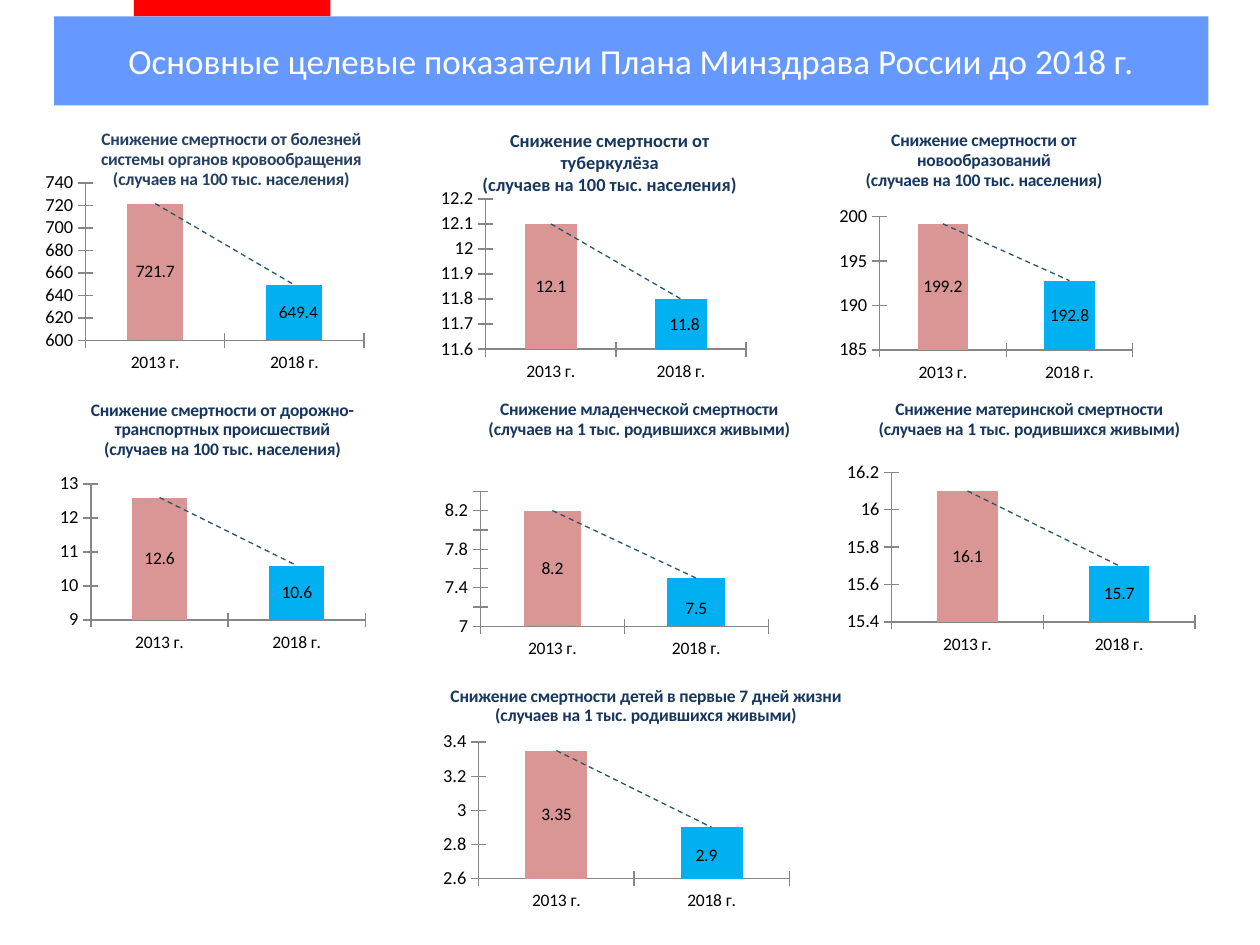
from pptx import Presentation
from pptx.chart.data import CategoryChartData
from pptx.dml.color import RGBColor
from pptx.enum.chart import XL_CHART_TYPE as ChartType
from pptx.enum.chart import XL_LABEL_POSITION as LabelPosition
from pptx.enum.chart import XL_TICK_MARK as TickMark
from pptx.enum.shapes import MSO_SHAPE as ShapeKind
from pptx.enum.text import MSO_ANCHOR as Anchor
from pptx.enum.text import PP_ALIGN as Align
from pptx.oxml import parse_xml
from pptx.util import Pt

CHART_NS = "http://schemas.openxmlformats.org/drawingml/2006/chart"
DRAWING_NS = "http://schemas.openxmlformats.org/drawingml/2006/main"
NAMESPACES = f'xmlns:c="{CHART_NS}" xmlns:a="{DRAWING_NS}"'
YEARS = ["2013 г.", "2018 г."]
PER_100_THOUSAND = "(случаев на 100 тыс. населения)"
PER_THOUSAND = "(случаев на 1 тыс. родившихся живыми)"


def color(hex_value):
    return RGBColor.from_string(hex_value)


def set_all(target, values):
    for name, value in values.items():
        setattr(target, name, value)


def layout(values, inner=False):
    parts = '<c:layoutTarget val="inner"/>' if inner else ""
    modes = ("x", "y") if len(values) == 4 or not inner else ()
    parts += "".join(f'<c:{axis}Mode val="edge"/>' for axis in modes)
    parts += "".join(f'<c:{name} val="{value}"/>' for name, value in zip("xywh", values))
    return parse_xml(f"<c:layout {NAMESPACES}><c:manualLayout>{parts}</c:manualLayout></c:layout>")


def label_offset(values):
    parts = "".join(f'<c:{name} val="{value}"/>' for name, value in zip("xy", values))
    return parse_xml(f"<c:layout {NAMESPACES}><c:manualLayout>{parts}</c:manualLayout></c:layout>")


class SlideBuilder:
    font_name = "Calibri"
    bar_colors = ("D99694", "00B0F0")
    axis_color = "868686"
    trend_color = "215968"

    def __init__(self, slide):
        self.slide = slide

    def style_font(self, font, size, hex_value="000000", bold=False):
        set_all(font, {"name": self.font_name, "size": Pt(size), "bold": bold})
        font.color.rgb = color(hex_value)

    def box(self, bounds, fill, text="", size=20):
        shape = self.slide.shapes.add_shape(ShapeKind.RECTANGLE, *map(Pt, bounds))
        shape.shadow.inherit = False
        shape.fill.solid()
        shape.fill.fore_color.rgb = color(fill)
        shape.line.fill.background()
        if text:
            set_all(shape.text_frame, {"word_wrap": True, "vertical_anchor": Anchor.MIDDLE})
            paragraph = shape.text_frame.paragraphs[0]
            paragraph.alignment = Align.CENTER
            run = paragraph.add_run()
            run.text = text
            self.style_font(run.font, size, "FFFFFF")

    def title(self, chart, text, position, size, hex_value):
        chart.has_title = True
        title = chart.chart_title
        title.include_in_layout = False
        title.text_frame.text = text
        for paragraph in title.text_frame.paragraphs:
            self.style_font(paragraph.font, size, hex_value, True)
            for run in paragraph.runs:
                self.style_font(run.font, size, hex_value, True)
        element = title._element
        for old_layout in element.xpath("c:layout"):
            element.remove(old_layout)
        element.xpath("c:tx")[0].addnext(layout(position))

    def axes(self, chart, scale):
        minimum, maximum, step = scale
        set_all(chart.value_axis, {
            "minimum_scale": minimum, "maximum_scale": maximum, "major_unit": step})
        set_all(chart.value_axis.tick_labels, {
            "number_format": "General", "number_format_is_linked": False})
        for axis, size in ((chart.category_axis, 10), (chart.value_axis, 10.5)):
            set_all(axis, {
                "has_major_gridlines": False, "major_tick_mark": TickMark.CROSS,
                "minor_tick_mark": TickMark.NONE})
            axis.format.line.width = Pt(0.75)
            axis.format.line.color.rgb = color(self.axis_color)
            self.style_font(axis.tick_labels.font, size)

    def labels(self, plot, series, offset):
        plot.has_data_labels = True
        series_labels = series.data_labels
        set_all(series_labels, {
            "show_value": True, "position": LabelPosition.CENTER,
            "number_format": "General", "number_format_is_linked": False})
        self.style_font(series_labels.font, 10)
        if offset:
            label = series.points[1].data_label
            self.style_font(label.font, 10)
            label.position = LabelPosition.CENTER
            index = series._element.xpath("c:dLbls/c:dLbl/c:idx")[0]
            index.addnext(label_offset(offset))

    def trend(self, series):
        trendline = parse_xml(
            f'<c:trendline {NAMESPACES}><c:spPr><a:ln w="{Pt(0.75)}"><a:solidFill>'
            f'<a:srgbClr val="{self.trend_color}"/></a:solidFill><a:prstDash val="dash"/>'
            '</a:ln></c:spPr><c:trendlineType val="linear"/><c:dispRSqr val="0"/>'
            '<c:dispEq val="0"/></c:trendline>')
        series._element.xpath("c:cat")[0].addprevious(trendline)

    def bar_chart(self, bounds, title, title_at, values, scale, plot_at,
                  offset=None, title_size=10, title_color="17375E", name="Series 1"):
        data = CategoryChartData()
        data.categories = YEARS
        data.add_series(name, values)
        chart = self.slide.shapes.add_chart(
            ChartType.COLUMN_CLUSTERED, *map(Pt, bounds), data).chart
        chart.has_legend = False
        self.style_font(chart.font, 10.5)
        self.title(chart, title, title_at, title_size, title_color)
        self.axes(chart, scale)
        plot = chart.plots[0]
        set_all(plot, {"gap_width": 150, "vary_by_categories": False})
        series = plot.series[0]
        series.invert_if_negative = False
        for index, hex_value in enumerate(self.bar_colors):
            fill = series.points[index].format.fill
            fill.solid()
            fill.fore_color.rgb = color(hex_value)
        self.labels(plot, series, offset)
        self.trend(series)
        plot_area = chart._chartSpace.xpath("c:chart/c:plotArea")[0]
        for old_layout in plot_area.xpath("c:layout"):
            plot_area.remove(old_layout)
        plot_area.insert(0, layout(plot_at, inner=True))


def main():
    presentation = Presentation()
    set_all(presentation, {"slide_width": Pt(720), "slide_height": Pt(540)})
    builder = SlideBuilder(presentation.slides.add_slide(presentation.slide_layouts[6]))
    builder.box((31, 9.3, 659.5, 51), "6699FF",
                "Основные целевые показатели Плана Минздрава России до 2018 г.")
    builder.box((76.5, 0, 112.3, 9.3), "FF0000")

    circulation = ("Снижение смертности от болезней системы органов кровообращения\n"
                   + PER_100_THOUSAND)
    builder.bar_chart((20.2, 67.7, 221, 147.6), circulation, (0.16, 0.02),
                      (721.7, 649.4), (600, 740, 20), (0.13, 0.25, 0.72, 0.61),
                      offset=(0.01, 0), title_color="254061", name=circulation)
    builder.bar_chart((468, 67.7, 203.8, 181.4),
                      "Снижение смертности от новообразований\n" + PER_100_THOUSAND,
                      (0.12, 0.02), (199.2, 192.8), (185, 200, 5), (0.17, 0.31, 0.71, 0.42))
    builder.bar_chart((247, 67.7, 203.8, 153.4),
                      "Снижение смертности от туберкулёза\n" + PER_100_THOUSAND,
                      (0.13, 0.02), (12.1, 11.8), (11.6, 12.2, 0.1), (0.15, 0.3, 0.73, 0.56),
                      offset=(0.01, 0), title_size=10.5)
    builder.bar_chart((14.4, 215.3, 221, 165.6),
                      "Снижение смертности от дорожно-транспортных происшествий\n"
                      + PER_100_THOUSAND,
                      (0.16, 0.06), (12.6, 10.6), (9, 13, 1), (0.17, 0.37, 0.71, 0.47))
    builder.bar_chart((241.2, 221, 238.3, 193),
                      "Снижение младенческой смертности\n" + PER_THOUSAND,
                      (0.15, 0.02), (8.2, 7.5), (7, 8.4, 0.2), (0.14, 0.31, 0.69, 0.4),
                      offset=(0, 0.02))
    builder.bar_chart((473, 221, 244, 203.8),
                      "Снижение материнской смертности\n" + PER_THOUSAND,
                      (0.11, 0.02), (16.1, 15.7), (15.4, 16.2, 0.2), (0.15, 0.24, 0.71, 0.42))
    builder.bar_chart((212.4, 383, 306, 141.8),
                      "Снижение смертности детей в первые 7 дней жизни\n" + PER_THOUSAND,
                      (0.14, 0.04), (3.35, 2.9), (2.6, 3.4, 0.2), (0.2, 0.29, 0.58, 0.55),
                      offset=(-0.01, 0.01))
    presentation.save("out.pptx")


if __name__ == "__main__":
    main()
